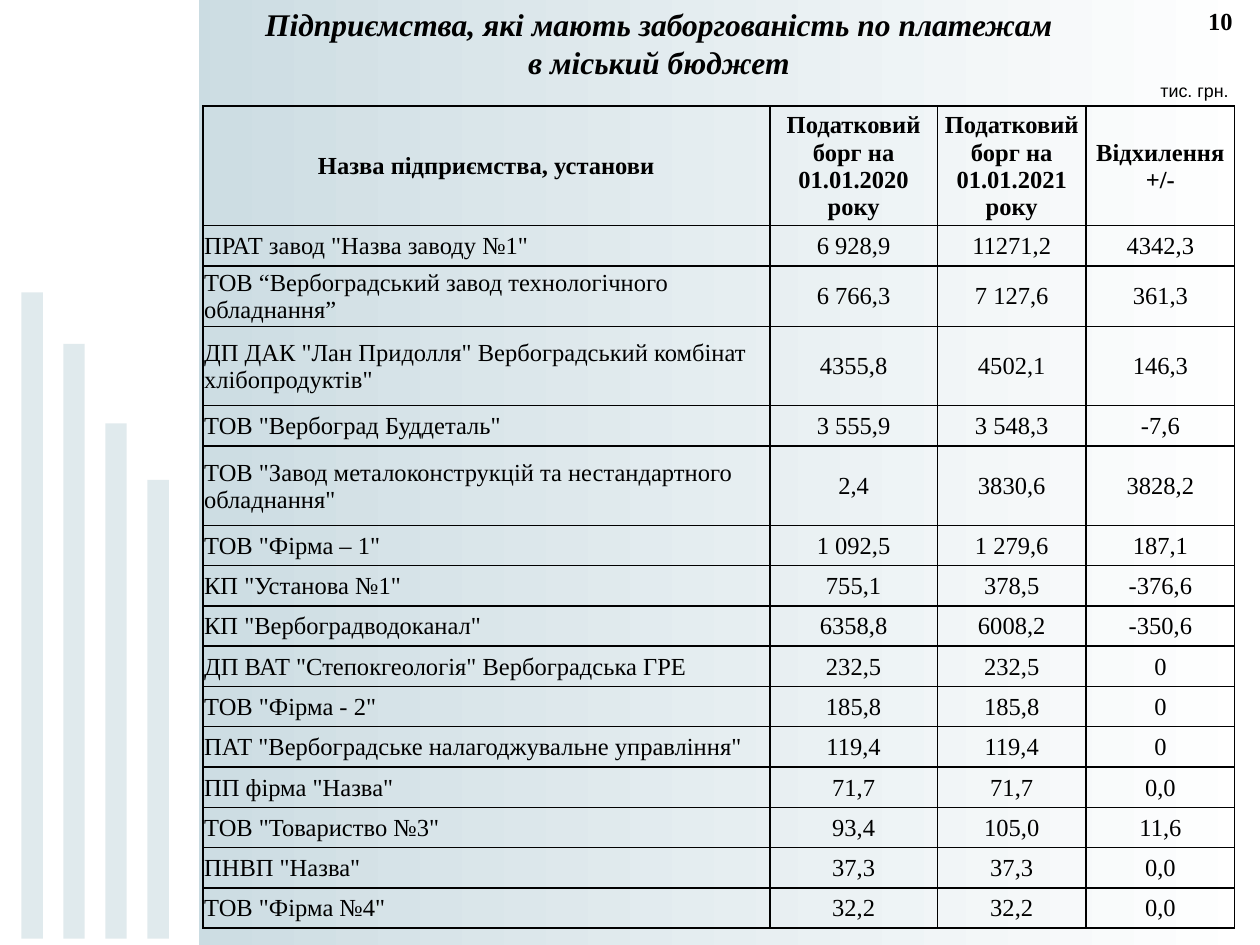
from dataclasses import dataclass

from lxml.etree import SubElement
from pptx import Presentation
from pptx.dml.color import RGBColor
from pptx.enum.shapes import MSO_SHAPE as Shape
from pptx.enum.text import MSO_ANCHOR as Anchor, PP_ALIGN as Align
from pptx.oxml.ns import qn
from pptx.util import Inches, Pt


@dataclass(frozen=True)
class Theme:
    mist: str = "C3D6DD"
    white: str = "FFFFFF"
    black: str = "000000"
    serif: str = "Times New Roman"
    sans: str = "Arial"
    title: float = 18
    body: float = 14
    unit: float = 10.2


THEME = Theme()

HEADER = ("Назва підприємства, установи", "Податковий борг на 01.01.2020 року",
          "Податковий борг на 01.01.2021 року", "Відхилення +/-")
DEBTORS = [
    ('ПРАТ завод "Назва заводу №1"', "6 928,9", "11271,2", "4342,3"),
    ("ТОВ “Вербоградський завод технологічного обладнання”", "6 766,3", "7 127,6", "361,3"),
    ('ДП ДАК "Лан Придолля" Вербоградський комбінат хлібопродуктів"',
     "4355,8", "4502,1", "146,3"),
    ('ТОВ "Вербоград Буддеталь"', "3 555,9", "3 548,3", "-7,6"),
    ('ТОВ "Завод металоконструкцій та нестандартного обладнання"',
     "2,4", "3830,6", "3828,2"),
    ('ТОВ "Фірма – 1"', "1 092,5", "1 279,6", "187,1"),
    ('КП "Установа №1"', "755,1", "378,5", "-376,6"),
    ('КП "Вербоградводоканал"', "6358,8", "6008,2", "-350,6"),
    ('ДП ВАТ "Степокгеологія" Вербоградська ГРЕ', "232,5", "232,5", "0"),
    ('ТОВ "Фірма - 2"', "185,8", "185,8", "0"),
    ('ПАТ "Вербоградське налагоджувальне управління"', "119,4", "119,4", "0"),
    ('ПП фірма "Назва"', "71,7", "71,7", "0,0"),
    ('ТОВ "Товариство №3"', "93,4", "105,0", "11,6"),
    ('ПНВП "Назва"', "37,3", "37,3", "0,0"),
    ('ТОВ "Фірма №4"', "32,2", "32,2", "0,0"),
]
COLUMN_WIDTHS = (4.5, 1.33, 1.18, 1.18)
ROW_HEIGHT = 0.32
TALL_ROWS = {0: 0.95, 2: 0.48, 3: 0.63, 5: 0.63}


def write(frame, text, size=THEME.body, font=THEME.serif, bold=False, italic=False,
          align=Align.LEFT):
    para = frame.paragraphs[0]
    para.text = text
    para.alignment = align
    for span in para.runs:
        span.font.name, span.font.size = font, Pt(size)
        span.font.bold, span.font.italic = bold, italic
        span.font.color.rgb = RGBColor.from_string(THEME.black)


def add_text(page, box, text, insets=(0.1, 0.05, 0.1, 0.05), anchor=Anchor.TOP,
             wrap=True, **style):
    frame = page.shapes.add_textbox(*map(Inches, box)).text_frame
    frame.word_wrap = wrap
    frame.vertical_anchor = anchor
    (frame.margin_left, frame.margin_top,
     frame.margin_right, frame.margin_bottom) = map(Inches, insets)
    write(frame, text, **style)


def add_bar(page, box, color, opacity=100):
    bar = page.shapes.add_shape(Shape.RECTANGLE, *map(Inches, box))
    bar.shadow.inherit = False
    bar.line.fill.background()
    bar.fill.solid()
    bar.fill.fore_color.rgb = RGBColor.from_string(color)
    if opacity < 100:
        tint = bar.fill._xPr.find(qn("a:solidFill"))[0]
        SubElement(tint, qn("a:alpha"), val=str(opacity * 1000))


def paint_background(page):
    fill = page.background.fill
    fill.gradient()
    fill.gradient_angle = 0
    for stop, color in zip(fill.gradient_stops, (THEME.mist, THEME.white)):
        stop.color.rgb = RGBColor.from_string(color)


def add_side_panel(page, box):
    left, top, width, height = box
    add_bar(page, box, THEME.white)
    bottom = top + height - 0.05
    for index, bar_top in enumerate((2.32, 2.73, 3.36, 3.81)):
        add_bar(page, (left + 0.25 + index / 3, bar_top, 0.17, bottom - bar_top),
                THEME.mist, opacity=50)


def add_heading(page, box):
    add_text(page, (9.49, 0, 0.51, 0.34), "10", bold=True)
    add_text(page, box, "Підприємства, які мають заборгованість по платежам\vв міський бюджет",
             anchor=Anchor.MIDDLE, size=THEME.title, bold=True, italic=True,
             align=Align.CENTER)
    add_text(page, (9.17, 0.6, 0.63, 0.28), "тис. грн.", insets=(0.04, 0.03, 0, 0),
             wrap=False, size=THEME.unit, font=THEME.sans)


def outline(cell):
    properties = cell._tc.get_or_add_tcPr()
    for side in "LRTB":
        line = SubElement(properties, qn(f"a:ln{side}"), w=str(Pt(1)))
        SubElement(SubElement(line, qn("a:solidFill")), qn("a:srgbClr"), val=THEME.black)


def add_debt_table(page, box):
    rows = [HEADER, *DEBTORS]
    table = page.shapes.add_table(len(rows), len(HEADER), *map(Inches, box)).table
    table.first_row = table.horz_banding = False
    for column, width in zip(table.columns, COLUMN_WIDTHS):
        column.width = Inches(width)
    for r, values in enumerate(rows):
        table.rows[r].height = Inches(TALL_ROWS.get(r, ROW_HEIGHT))
        for c, value in enumerate(values):
            cell = table.cell(r, c)
            outline(cell)
            cell.fill.background()
            cell.vertical_anchor = Anchor.MIDDLE
            cell.margin_left = cell.margin_top = cell.margin_right = Inches(0.01)
            cell.margin_bottom = 0
            is_name = r > 0 and c == 0
            write(cell.text_frame, value, bold=r == 0,
                  align=Align.LEFT if is_name else Align.CENTER)


def main():
    deck = Presentation()
    deck.slide_width, deck.slide_height = Inches(10), Inches(7.5)
    page = deck.slides.add_slide(deck.slide_layouts[6])
    paint_background(page)
    add_side_panel(page, (-0.08, -0.02, 1.66, 7.52))
    add_heading(page, (0.9, 0, 8.66, 0.68))
    add_debt_table(page, (1.61, 0.84, 8.19, 6.54))
    deck.save("out.pptx")


if __name__ == "__main__":
    main()
